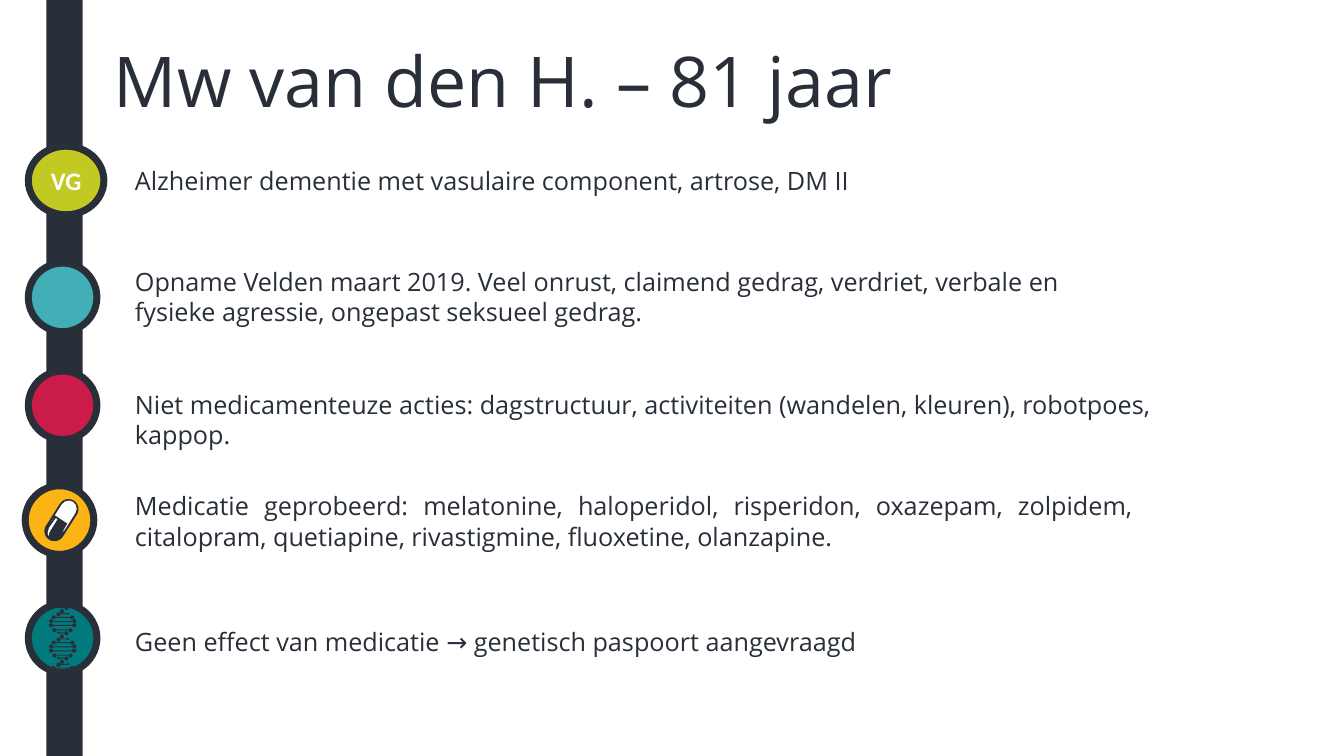
from pptx import Presentation
from pptx.dml.color import RGBColor
from pptx.enum import shapes, text
from pptx.util import Pt

INK, WHITE = "282F39", "FFFFFF"
FONT = "Open Sans"
OVAL = shapes.MSO_SHAPE.OVAL
RECT = shapes.MSO_SHAPE.RECTANGLE
PILL = shapes.MSO_SHAPE.ROUNDED_RECTANGLE
LEFT, JUSTIFY = text.PP_ALIGN.LEFT, text.PP_ALIGN.JUSTIFY

HEADING = "Mw van den H. – 81 jaar"
BAND = (33.1, 0, 26, 540)
MARKERS = [
    ("VG", "C2C923", (20.2, 104.4, 54, 49)),
    ("", "42AFB6", (20.2, 187.9, 49, 49)),
    ("", "CB1B4A", (20.2, 265, 49, 49)),
    ("", "FCB414", (18, 347, 49, 49)),
    ("", "007A7D", (20.2, 431.3, 49, 49)),
]
ENTRIES = [
    ("Alzheimer dementie met vasulaire component, artrose, DM II", 114.5, 537, 29, JUSTIFY),
    ("Opname Velden maart 2019. Veel onrust, claimend gedrag, verdriet, verbale en "
     "fysieke agressie, ongepast seksueel gedrag.", 186.5, 718, 51, LEFT),
    ("Niet medicamenteuze acties: dagstructuur, activiteiten (wandelen, kleuren), "
     "robotpoes, kappop.", 274.3, 783, 29, LEFT),
    ("Medicatie geprobeerd: melatonine, haloperidol, risperidon, oxazepam, zolpidem, "
     "citalopram, quetiapine, rivastigmine, fluoxetine, olanzapine.", 347, 727, 51, JUSTIFY),
    ("Geen effect van medicatie → genetisch paspoort aangevraagd", 443.5, 694, 29, LEFT),
]
CAPSULE = [(INK, (36.7, 355, 14.4, 33)), (WHITE, (39.4, 356.4, 11.5, 26))]
CAPSULE_TILT = 212.4
CAPSULE_PARTS = [
    (INK, [(48.2, 374.4), (43.2, 383), (41.5, 384.6), (38.9, 385.2), (36, 383.8),
           (33.8, 381.6), (33.3, 379), (33.8, 376.6), (38.9, 367.9)]),
    (WHITE, [(34.6, 377.3), (39.6, 370.1), (41, 370.8), (36, 378.7), (35.3, 381),
             (35.3, 383), (33.9, 381)]),
]
HELIX_TOP, HELIX_BOTTOM_TURN, TURN_START, TURN_PITCH, HELIX_CENTRE = 423.5, 2, 430.6, 18.1, 45.2
DOT, SPECK = (2.9, 2.9), (2.2, 1.4)
TURN_DOTS = [
    (37.4, 0, DOT), (49, 0, DOT), (46, 2.2, DOT), (40.7, 2.5, SPECK), (42.8, 4.5, DOT),
    (40.3, 6.7, DOT), (47.4, 7, SPECK), (36.9, 8.9, DOT), (50.2, 8.9, DOT),
    (35.1, 11.6, DOT), (51.7, 11.6, DOT), (35, 14.6, DOT), (51.5, 14.6, DOT),
]
TURN_RUNGS = [(0.9, 11.5), (3, 5.8), (7.4, 5.8), (10, 11.5), (13, 16.6), (15.8, 16.6)]


def colour(value):
    return RGBColor.from_string(value)


def assign(target, values):
    for key, value in values.items():
        setattr(target, key, value)


def paint(part, fill, outline=None):
    part.shadow.inherit = False
    part.fill.solid()
    part.fill.fore_color.rgb = colour(fill)
    if outline:
        part.line.color.rgb = colour(outline)
        part.line.width = Pt(5)
    else:
        part.line.fill.background()
    return part


def add_part(kind, place, fill, outline=None):
    return paint(slide.shapes.add_shape(kind, *map(Pt, place)), fill, outline)


def write(part, words, size, align, anchor, ink=INK, font=FONT, bold=False):
    frame = part.text_frame
    assign(frame, {"word_wrap": True, "vertical_anchor": anchor})
    paragraph = frame.paragraphs[0]
    paragraph.alignment = align
    run = paragraph.add_run()
    run.text = words
    assign(run.font, {"size": Pt(size), "name": font, "bold": bold})
    run.font.color.rgb = colour(ink)
    return frame


deck = Presentation()
assign(deck, {"slide_width": Pt(960), "slide_height": Pt(540)})
slide = deck.slides.add_slide(deck.slide_layouts[5])

heading = slide.shapes.title
assign(heading, {"left": Pt(74.2), "top": Pt(23), "width": Pt(762), "height": Pt(67.7)})
write(heading, HEADING, 50, LEFT, text.MSO_ANCHOR.TOP).auto_size = text.MSO_AUTO_SIZE.SHAPE_TO_FIT_TEXT

add_part(RECT, BAND, INK)
for label, fill, place in MARKERS:
    marker = add_part(OVAL, place, fill, INK)
    if label:
        write(marker, label, 18, text.PP_ALIGN.CENTER, text.MSO_ANCHOR.MIDDLE, WHITE, "Calibri", True)

for words, top, width, height, align in ENTRIES:
    entry = slide.shapes.add_textbox(Pt(89.3), Pt(top), Pt(width), Pt(height))
    frame = write(entry, words, 18, align, text.MSO_ANCHOR.TOP)
    frame.auto_size = text.MSO_AUTO_SIZE.SHAPE_TO_FIT_TEXT

for fill, place in CAPSULE:
    capsule = add_part(PILL, place, fill)
    capsule.adjustments[0] = 0.5
    capsule.rotation = CAPSULE_TILT
for fill, points in CAPSULE_PARTS:
    outline = slide.shapes.build_freeform(*points[0], scale=Pt(1))
    outline.add_line_segments(points[1:], close=True)
    paint(outline.convert_to_shape(), fill)

for turn in range(-1, HELIX_BOTTOM_TURN + 1):
    start = TURN_START + turn * TURN_PITCH
    dots = [(OVAL, (x, start + y, *size)) for x, y, size in TURN_DOTS]
    rungs = [(RECT, (HELIX_CENTRE - width / 2, start + y, width, 0.7)) for y, width in TURN_RUNGS]
    for kind, place in dots + rungs:
        if place[1] >= HELIX_TOP:
            add_part(kind, place, INK)

deck.save("out.pptx")
